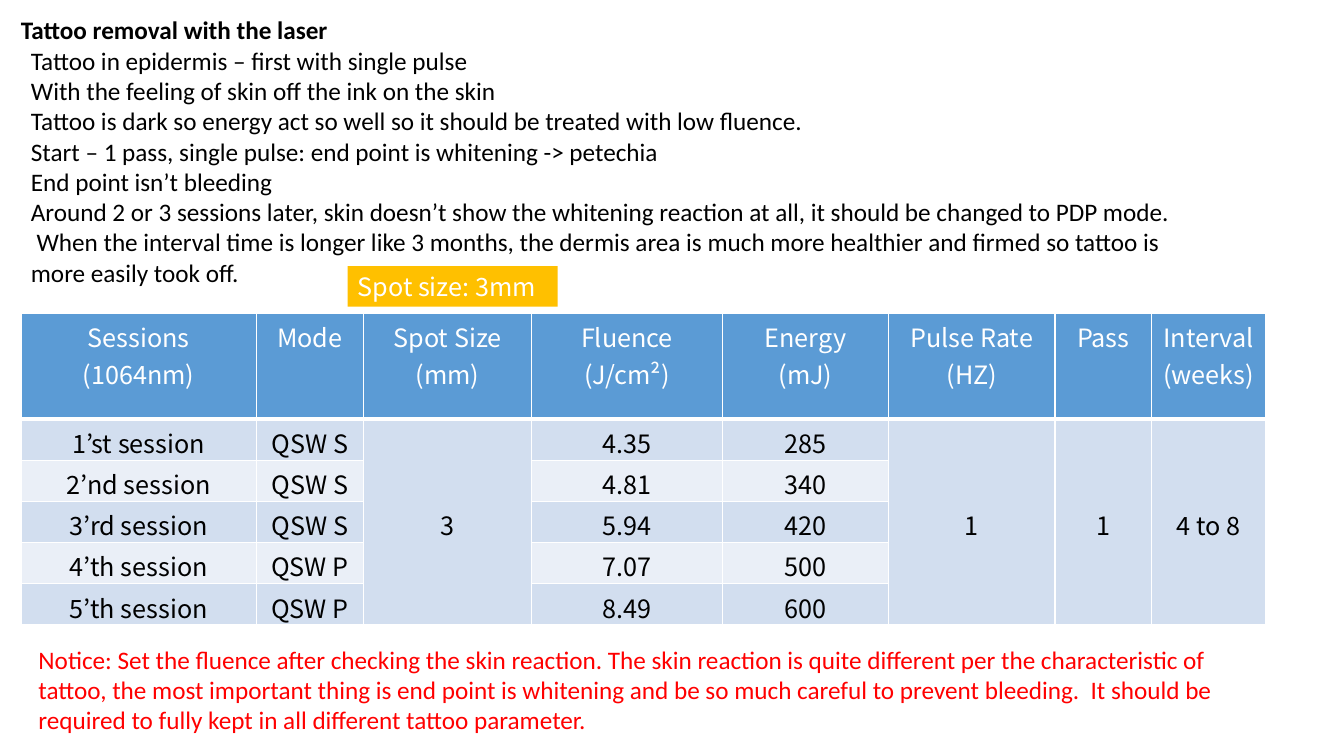
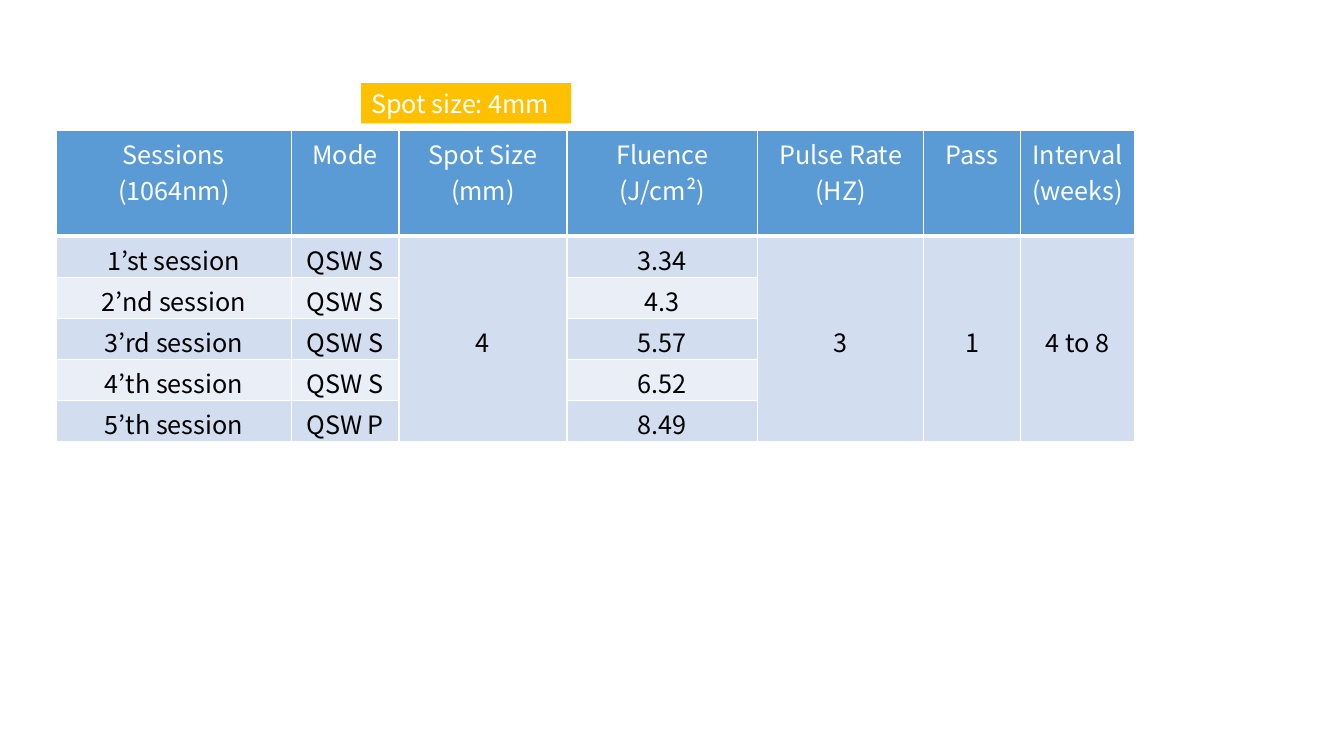
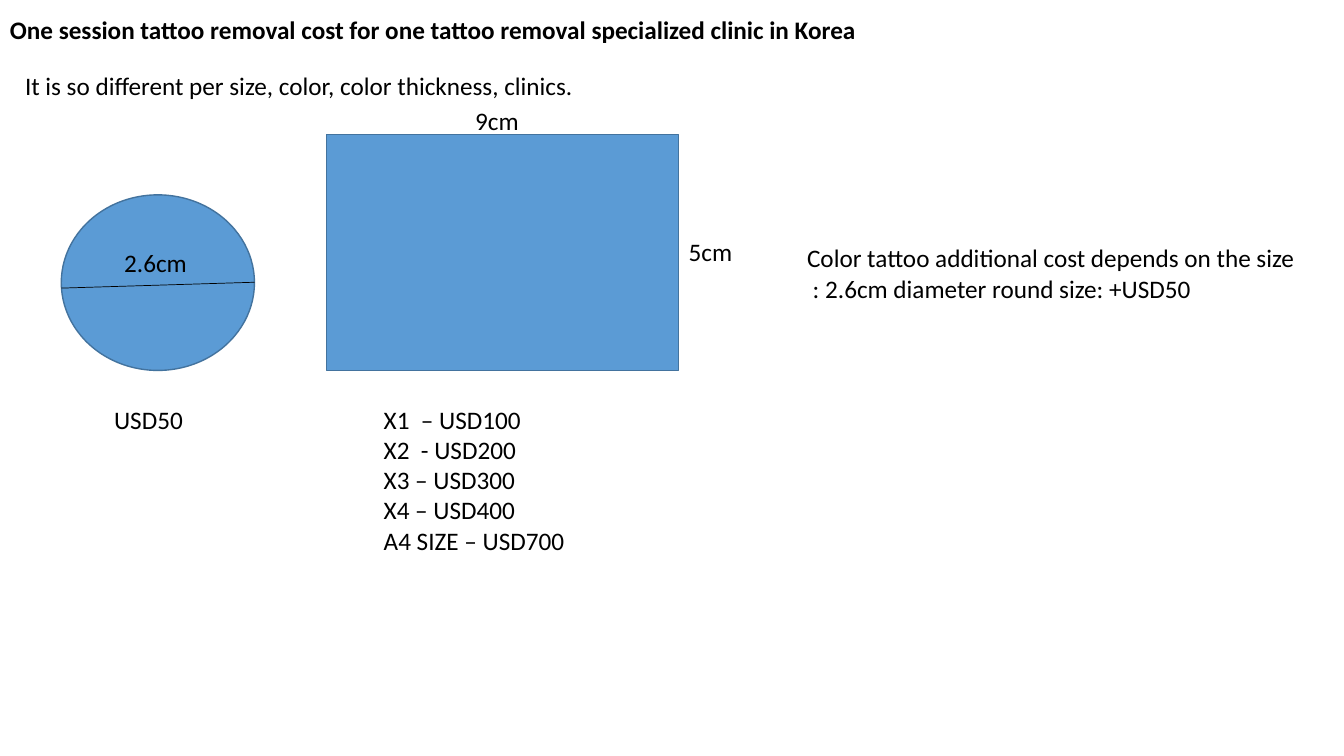
from lxml import etree
from pptx import Presentation
from pptx.dml.color import RGBColor as Rgb
from pptx.enum.shapes import MSO_CONNECTOR as Conn, MSO_SHAPE as Kind
from pptx.enum.text import MSO_ANCHOR as Anchor, PP_ALIGN as Align
from pptx.oxml.ns import qn
from pptx.util import Inches, Pt

# The slide is a grid of 160 columns by 90 rows of square units.
COLS, ROWS = 160, 90
UNIT = Inches(7.5) / ROWS
LINE = 4.8
HUES = {
    "ink": "000000", "paper": "FFFFFF", "alert": "FF0000", "tag": "FFC000",
    "blue": "5B9BD5", "edge": "43739E", "odd": "D2DEEF", "even": "EAEFF7",
}
BODY, GRID = "Calibri", "Noto Sans CJK KR"
HEAD_ROW, BODY_ROW = 12.6, 4.9

# Heading and column width
FIELDS = {
    "session": ("Sessions\n(1064nm)", 28),
    "mode": ("Mode", 12.8),
    "spot": ("Spot Size\n(mm)", 20),
    "fluence": ("Fluence\n(J/cm²)", 22.7),
    "energy": ("Energy\n(mJ)", 19.8),
    "rate": ("Pulse Rate\n(HZ)", 19.8),
    "pass": ("Pass", 11.5),
    "weeks": ("Interval\n(weeks)", 13.6),
}
SESSIONS = [f"{nth} session" for nth in ("1’st", "2’nd", "3’rd", "4’th", "5’th")]

ADVICE = """Tattoo in epidermis – first with single pulse
With the feeling of skin off the ink on the skin
Tattoo is dark so energy act so well so it should be treated with low fluence.
Start – 1 pass, single pulse: end point is whitening -> petechia
End point isn’t bleeding
Around 2 or 3 sessions later, skin doesn’t show the whitening reaction at all, it should be changed to PDP mode.
 When the interval time is longer like 3 months, the dermis area is much more healthier and firmed so tattoo is
more easily took off."""
NOTICE = (
    "Notice: Set the fluence after checking the skin reaction. The skin reaction is "
    "quite different per the characteristic of tattoo, the most important thing is end "
    "point is whitening and be so much careful to prevent bleeding.  It should be "
    "required to fully kept in all different tattoo parameter."
)
PRICES = """X1  – USD100
X2  - USD200
X3 – USD300
X4 – USD400
A4 SIZE – USD700"""
EXTRA = """Color tattoo additional cost depends on the size
 : 2.6cm diameter round size: +USD50"""


def span(*units):
    return [round(n * UNIT) for n in units]


def hue(name):
    return Rgb.from_string(HUES[name])


def write(frame, text, color="ink", face=BODY, bold=False, align=Align.LEFT):
    """Fill a text frame with one paragraph per line of text."""
    for i, line in enumerate(text.split("\n")):
        para = frame.paragraphs[0] if i == 0 else frame.add_paragraph()
        para.alignment = align
        run = para.add_run()
        run.text = line
        run.font.size, run.font.name = Pt(18), face
        run.font.bold = bold
        run.font.color.rgb = hue(color)


def label(slide, box, text, **style):
    frame = slide.shapes.add_textbox(*span(*box)).text_frame
    frame.word_wrap = True
    write(frame, text, **style)


def title(slide, left, text):
    label(slide, (left, 1.1, 138, LINE), text, bold=True)


def block(slide, kind, box, fill, edge=None):
    shape = slide.shapes.add_shape(kind, *span(*box))
    shape.shadow.inherit = False
    shape.fill.solid()
    shape.fill.fore_color.rgb = hue(fill)
    if edge:
        shape.line.color.rgb = hue(edge)
        shape.line.width = Pt(1)
    else:
        shape.line.fill.background()
    return shape


def rule(cell, side, width):
    """Draw a white border on one side of a cell."""
    props = cell._tc.get_or_add_tcPr()
    line = etree.SubElement(props, qn(f"a:{side}"), w=str(Pt(width)))
    fill = etree.SubElement(line, qn("a:solidFill"))
    etree.SubElement(fill, qn("a:srgbClr"), val=HUES["paper"])


def style(cell, fill, head):
    for side in ("lnL", "lnR", "lnT", "lnB"):
        rule(cell, side, 3 if head and side == "lnB" else 1)
    cell.fill.solid()
    cell.fill.fore_color.rgb = hue(fill)
    cell.margin_bottom = 0
    cell.vertical_anchor = Anchor.TOP


def plan(slide, left, top, shift, data):
    """Session table with its spot size tag; a plain string fills a merged column."""
    keys = [key for key in FIELDS if key in data]
    widths = [FIELDS[key][1] for key in keys]
    count = len(SESSIONS)
    box = (left, top, sum(widths), HEAD_ROW + count * BODY_ROW)
    table = slide.shapes.add_table(count + 1, len(keys), *span(*box)).table
    table.first_row = table.horz_banding = False
    for row in range(count + 1):
        table.rows[row].height = span(BODY_ROW if row else HEAD_ROW)[0]
    for col, key in enumerate(keys):
        table.columns[col].width = span(widths[col])[0]
        merged = isinstance(data[key], str)
        texts = [FIELDS[key][0]] + ([data[key]] if merged else data[key])
        for row in range(count + 1):
            head = row == 0
            fill = "blue" if head else "odd" if row % 2 else "even"
            style(table.cell(row, col), fill, head)
        if merged:
            table.cell(1, col).merge(table.cell(count, col))
            table.cell(1, col).vertical_anchor = Anchor.MIDDLE
        for row, text in enumerate(texts):
            write(table.cell(row, col).text_frame, text, face=GRID,
                  color="ink" if row else "paper", align=Align.CENTER)
    tag = block(slide, Kind.RECTANGLE, (left + shift, top - 5.6, 25, LINE), "tag")
    tag.text_frame.vertical_anchor = Anchor.TOP
    write(tag.text_frame, f"Spot size: {data['spot']}mm", "paper", GRID)


def round_price(slide, left, top, wide, high):
    block(slide, Kind.OVAL, (left, top, wide, high), "blue", "edge")
    ends = (left, top + 11.1, left + wide, top + 10.4)
    line = slide.shapes.add_connector(Conn.STRAIGHT, *span(*ends))
    line.line.color.rgb = hue("ink")
    line.line.width = Pt(0.5)
    etree.SubElement(line._element.spPr, qn("a:effectLst"))
    label(slide, (left + 6.3, top + 5.7, 11.8, LINE), "2.6cm")
    label(slide, (left + 5.1, top + high + 3.4, 12.4, LINE), "USD50")


def card_price(slide, left, top, wide, high):
    block(slide, Kind.RECTANGLE, (left, top, wide, high), "blue", "edge")
    label(slide, (left + 16.5, top - 4, 17, LINE), "9cm")
    label(slide, (left + wide, top + 11.6, 8.8, LINE), "5cm")
    label(slide, (left + 5.6, top + high + 3.4, 28, 19.4), PRICES)


def small_spot(slide):
    title(slide, 1.3, "Tattoo removal with the laser")
    label(slide, (2.5, 4.8, 156, 30.2), ADVICE)
    plan(slide, 2.5, 37.3, 38.9, {
        "session": SESSIONS, "mode": ["QSW S"] * 3 + ["QSW P"] * 2, "spot": "3",
        "fluence": ["4.35", "4.81", "5.94", "7.07", "8.49"],
        "energy": ["285", "340", "420", "500", "600"],
        "rate": "1", "pass": "1", "weeks": "4 to 8",
    })
    label(slide, (3.4, 76.1, 147.2, 12.1), NOTICE, color="alert")


def large_spot(slide):
    plan(slide, 6.7, 15.5, 36.3, {
        "session": SESSIONS, "mode": ["QSW S"] * 4 + ["QSW P"], "spot": "4",
        "fluence": ["3.34", "4.3", "5.57", "6.52", "8.49"],
        "rate": "3", "pass": "1", "weeks": "4 to 8",
    })


def costs(slide):
    title(slide, 0, "One session tattoo removal cost for one tattoo removal "
                    "specialized clinic in Korea")
    label(slide, (1.8, 7.8, 99, LINE),
          "It is so different per size, color, color thickness, clinics.")
    round_price(slide, 7.3, 23.2, 23, 20.9)
    card_price(slide, 38.9, 16, 41.9, 28.1)
    label(slide, (94.9, 28.3, 61.8, 15.7), EXTRA)


def main():
    deck = Presentation()
    deck.slide_width, deck.slide_height = span(COLS, ROWS)
    for build in (small_spot, large_spot, costs):
        build(deck.slides.add_slide(deck.slide_layouts[6]))
    deck.save("out.pptx")


if __name__ == "__main__":
    main()
